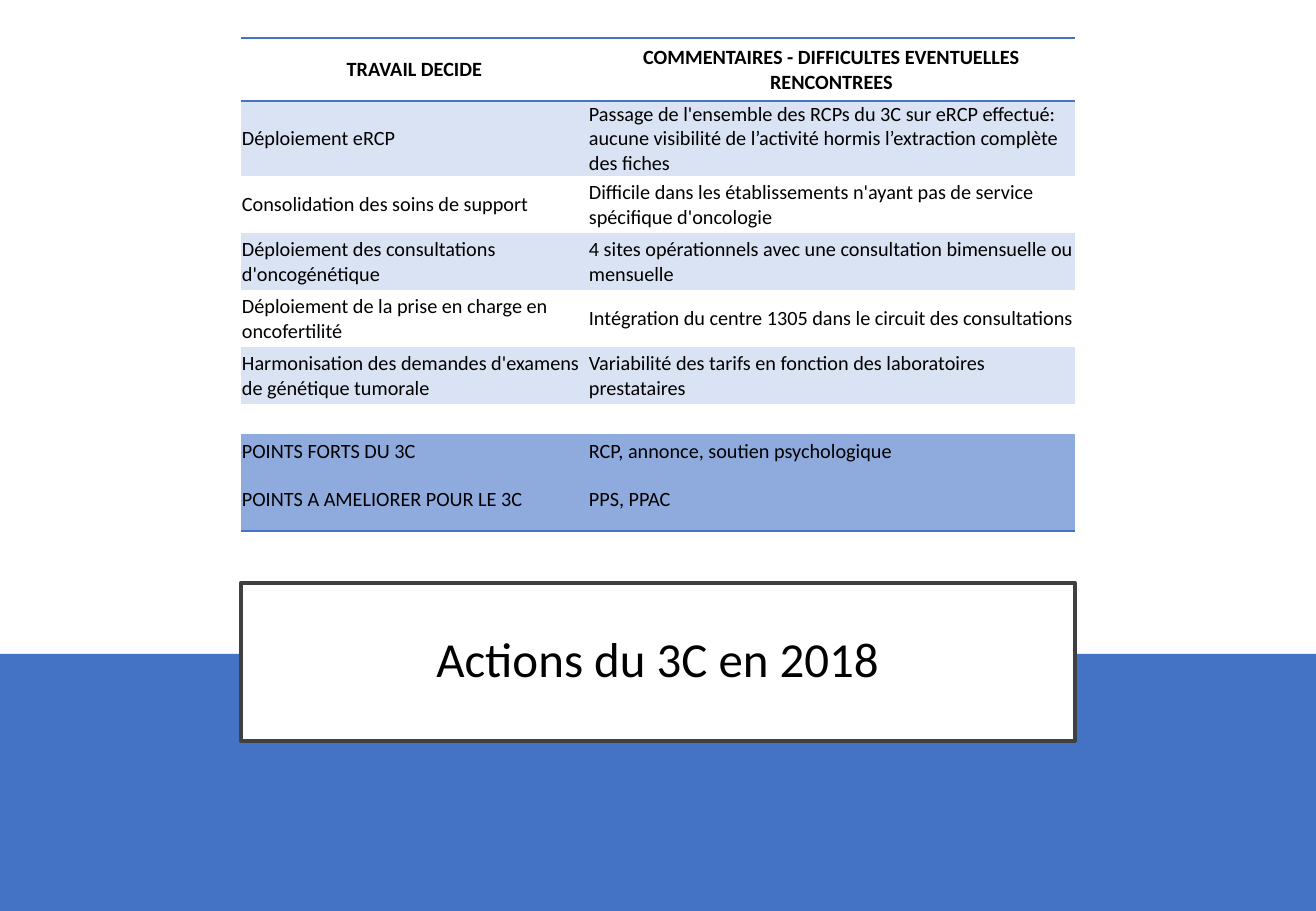
from lxml import etree
from pptx import Presentation
from pptx.dml.color import RGBColor
from pptx.enum.shapes import MSO_SHAPE
from pptx.enum.text import MSO_ANCHOR, MSO_AUTO_SIZE, PP_ALIGN
from pptx.oxml.ns import qn
from pptx.util import Pt

RECTANGLE = MSO_SHAPE.RECTANGLE
MIDDLE = MSO_ANCHOR.MIDDLE
CENTER, LEFT = PP_ALIGN.CENTER, PP_ALIGN.LEFT
NO_AUTOFIT = MSO_AUTO_SIZE.NONE

FONT = "Calibri"
PLAIN_TABLE_STYLE = "{2D5ABB26-0587-4C30-8999-92F81FD0307C}"
COLORS = {
    "blue": "4472C4",
    "pale": "DAE3F3",
    "medium": "8FAADC",
    "frame": "404040",
    "white": "FFFFFF",
    "black": "000000",
}


def px(count):
    return count * 7526


def rgb(name):
    return RGBColor.from_string(COLORS[name])


# Text, row height in px, fill and bordered sides (T top, B bottom)
ROWS = [
    ("TRAVAIL DECIDE", "COMMENTAIRES - DIFFICULTES EVENTUELLES RENCONTREES", 63, None, "TB"),
    ("Déploiement eRCP",
     "Passage de l'ensemble des RCPs du 3C sur eRCP effectué: aucune visibilité "
     "de l’activité hormis l’extraction complète des fiches", 75, "pale", ""),
    ("Consolidation des soins de support",
     "Difficile dans les établissements n'ayant pas de service spécifique d'oncologie",
     57, None, ""),
    ("Déploiement des consultations d'oncogénétique",
     "4 sites opérationnels avec une consultation bimensuelle ou mensuelle", 57, "pale", ""),
    ("Déploiement de la prise en charge en oncofertilité",
     "Intégration du centre 1305 dans le circuit des consultations", 57, None, ""),
    ("Harmonisation des demandes d'examens de génétique tumorale",
     "Variabilité des tarifs en fonction des laboratoires prestataires", 57, "pale", ""),
    ("", "", 30, None, ""),
    ("POINTS FORTS DU 3C", "RCP, annonce, soutien psychologique", 34, "medium", ""),
    ("POINTS A AMELIORER POUR LE 3C", "PPS, PPAC", 63, "medium", "B"),
]
COLUMN_WIDTHS = [347, 487]
CONTENT_LEFT, CONTENT_WIDTH = 241, sum(COLUMN_WIDTHS)
SLIDE_WIDTH, SLIDE_HEIGHT, BAND_TOP = 1316, 911, 654

presentation = Presentation()
presentation.slide_width = px(SLIDE_WIDTH)
presentation.slide_height = px(SLIDE_HEIGHT)
slide = presentation.slides.add_slide(presentation.slide_layouts[5])

# Bottom band, behind the title
band = slide.shapes.add_shape(
    RECTANGLE, 0, px(BAND_TOP), px(SLIDE_WIDTH), px(SLIDE_HEIGHT - BAND_TOP))
band.shadow.inherit = False
band.fill.solid()
band.fill.fore_color.rgb = rgb("blue")
band.line.fill.background()
slide.shapes.title.element.addprevious(band.element)

# Framed title
title = slide.shapes.title
title.left, title.top = px(CONTENT_LEFT), px(583)
title.width, title.height = px(CONTENT_WIDTH), px(158)
title.fill.solid()
title.fill.fore_color.rgb = rgb("white")
title.line.color.rgb = rgb("frame")
title.line.width = Pt(2.5)
title.text_frame.text = "Actions du 3C en 2018"
title.text_frame.auto_size = NO_AUTOFIT
title.text_frame.vertical_anchor = MIDDLE
paragraph = title.text_frame.paragraphs[0]
paragraph.alignment = CENTER
paragraph.line_spacing = 0.9
paragraph.font.name = FONT
paragraph.font.size = Pt(29)
paragraph.font.color.rgb = rgb("black")

# Table of actions
frame = slide.shapes.add_table(
    len(ROWS), len(COLUMN_WIDTHS), px(CONTENT_LEFT), px(38),
    px(CONTENT_WIDTH), px(sum(row[2] for row in ROWS)))
table = frame.table
table.first_row = False
table.horz_banding = False
table._tbl.tblPr.find(qn("a:tableStyleId")).text = PLAIN_TABLE_STYLE
for column, width in zip(table.columns, COLUMN_WIDTHS):
    column.width = px(width)

for row_index, (action, comment, height, fill, borders) in enumerate(ROWS):
    table.rows[row_index].height = px(height)
    is_header = row_index == 0
    for column_index, text in enumerate((action, comment)):
        cell = table.cell(row_index, column_index)
        cell.text = text
        cell.vertical_anchor = MIDDLE
        cell.margin_left = cell.margin_right = cell.margin_top = px(1)
        cell.margin_bottom = 0
        paragraph = cell.text_frame.paragraphs[0]
        paragraph.alignment = CENTER if is_header else LEFT
        paragraph.font.name = FONT
        paragraph.font.size = Pt(12)
        paragraph.font.bold = is_header
        paragraph.font.color.rgb = rgb("black")

        # Borders come before the fill in the cell properties
        properties = cell._tc.get_or_add_tcPr()
        for side in borders:
            line = etree.SubElement(properties, qn(f"a:ln{side}"), w=str(Pt(1)))
            solid = etree.SubElement(line, qn("a:solidFill"))
            etree.SubElement(solid, qn("a:srgbClr"), val=COLORS["blue"])
        if fill:
            cell.fill.solid()
            cell.fill.fore_color.rgb = rgb(fill)
        else:
            cell.fill.background()

presentation.save("out.pptx")
